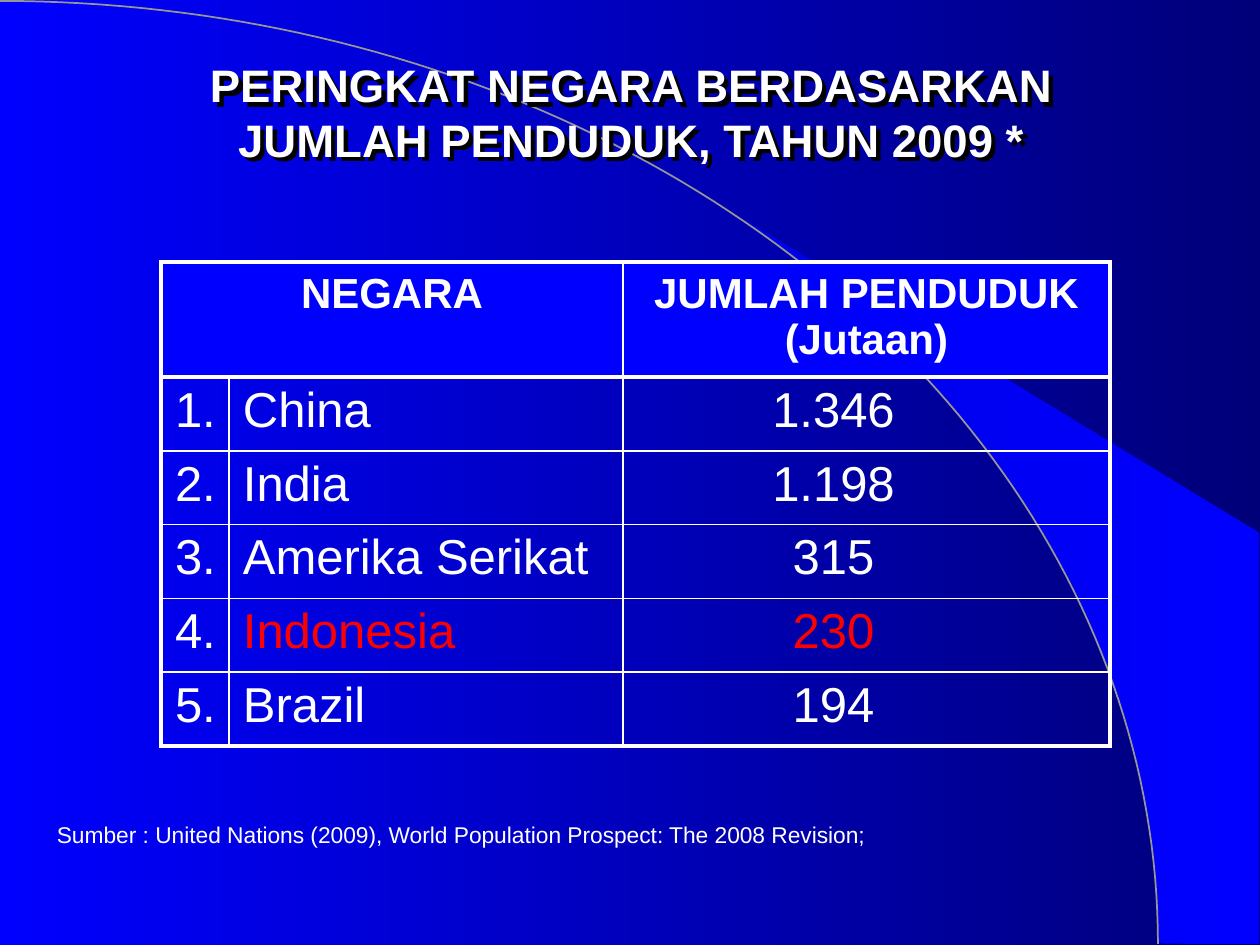
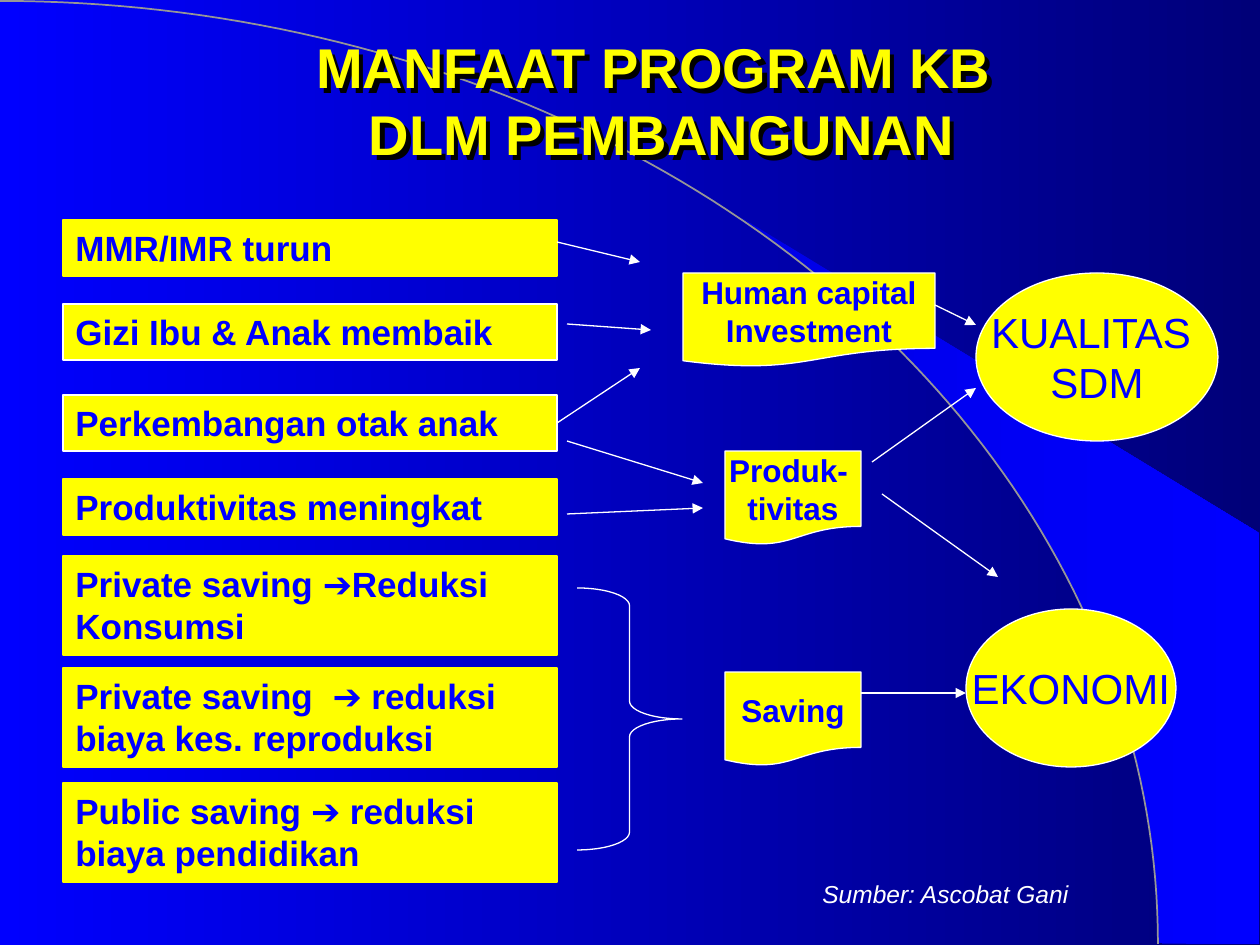
from math import cos, pi, sin

from lxml import etree
from pptx import Presentation
from pptx.dml.color import RGBColor
from pptx.enum.shapes import MSO_CONNECTOR, MSO_SHAPE
from pptx.enum.text import MSO_ANCHOR, MSO_AUTO_SIZE, PP_ALIGN
from pptx.oxml import parse_xml
from pptx.oxml.ns import nsdecls, qn
from pptx.util import Pt

SCALE = 914400 / 126
W, H = 1260, 945
FONT = "Arial"
C = {
    "blue": "0000FF",
    "navy": "000078",
    "wedge": "0000E7",
    "arc": "969696",
    "white": "FFFFFF",
    "yellow": "FFFF00",
    "red": "FF0000",
    "black": "000000",
}


def px(n):
    return round(n * SCALE)


def box_emu(box):
    return [px(n) for n in box]


def rgb(name):
    return RGBColor.from_string(C[name])


def set_gradient(fill, *names):
    fill.gradient()
    fill.gradient_angle = 0
    for stop, name in zip(fill.gradient_stops, names):
        stop.color.rgb = rgb(name)


def set_line(line, color, width):
    line.color.rgb = rgb(color)
    line.width = Pt(width)


def add_run(p, text, size, color, bold=False, italic=False):
    r = p.add_run()
    r.text = text
    f = r.font
    f.name, f.size, f.bold, f.italic = FONT, Pt(size), bold, italic
    f.color.rgb = rgb(color)


def write_lines(tf, lines, size, color, align=PP_ALIGN.CENTER, **style):
    """Write one paragraph per line."""
    for i, line in enumerate(lines):
        p = tf.add_paragraph() if i else tf.paragraphs[0]
        p.alignment = align
        add_run(p, line, size, color, **style)


def add_text_shadow(sp):
    """Give an unfilled text box a shadow, which falls from its letters."""
    sp.fill.background()
    sp._element.spPr.append(parse_xml(
        f'<a:effectLst {nsdecls("a")}><a:outerShdw dist="45000" dir="2700000" algn="ctr">'
        f'<a:srgbClr val="{C["black"]}"/></a:outerShdw></a:effectLst>'))


def add_polyline(s, points, close):
    (x, y), *rest = [(px(a), px(b)) for a, b in points]
    builder = s.shapes.build_freeform(x, y, scale=1.0)
    builder.add_line_segments(rest, close=close)
    sp = builder.convert_to_shape()
    sp.shadow.inherit = False
    return sp


def add_backdrop(s):
    """Gradient ground, bright wedge at the right and a quarter-ellipse arc."""
    set_gradient(s.background.fill, "blue", "navy")
    wedge = add_polyline(s, [
        (1159, 943), (1259, 944), (1259, 533), (742, 218), (786, 251), (823, 280),
        (863, 315), (902, 353), (960, 416), (1012, 484), (1048, 543), (1081, 604),
        (1106, 665), (1125, 721), (1138, 767), (1150, 827), (1155, 877)], True)
    set_gradient(wedge.fill, "wedge", "blue")
    wedge.line.fill.background()

    steps = 90
    angles = [pi / 2 * i / steps for i in range(steps + 1)]
    arc = add_polyline(s, [(1158 * sin(a), 944 - 943 * cos(a)) for a in angles], False)
    arc.fill.background()
    set_line(arc.line, "arc", 1)


def new_slide(prs):
    s = prs.slides.add_slide(prs.slide_layouts[6])
    add_backdrop(s)
    return s


def add_title(s, box, lines, size, color, anchor):
    sp = s.shapes.add_textbox(*box_emu(box))
    add_text_shadow(sp)
    tf = sp.text_frame
    tf.word_wrap = True
    tf.vertical_anchor = anchor
    p = tf.paragraphs[0]
    p.alignment = PP_ALIGN.CENTER
    for i, line in enumerate(lines):
        if i:
            p.add_line_break()
        add_run(p, line, size, color, bold=True)


def add_source(s, box, text, size, italic=False):
    tf = s.shapes.add_textbox(*box_emu(box)).text_frame
    tf.word_wrap = False
    tf.auto_size = MSO_AUTO_SIZE.SHAPE_TO_FIT_TEXT
    write_lines(tf, [text], size, "white", italic=italic)


def set_borders(cell, widths):
    """Draw white borders; widths run left, right, top, bottom in points."""
    tcPr = cell._tc.get_or_add_tcPr()
    for i, (side, width) in enumerate(zip("LRTB", widths)):
        ln = etree.Element(qn(f"a:ln{side}"), w=str(Pt(width)))
        fill = etree.SubElement(ln, qn("a:solidFill"))
        etree.SubElement(fill, qn("a:srgbClr"), val=C["white"])
        tcPr.insert(i, ln)


def add_population_table(s, box):
    countries = [("China", "1.346"), ("India", "1.198"), ("Amerika Serikat", "315"),
                 ("Indonesia", "230"), ("Brazil", "194")]
    rows = [("NEGARA", "", "JUMLAH PENDUDUK (Jutaan)")]
    rows += [(f"{i}.", *country) for i, country in enumerate(countries, 1)]
    last_row, last_col = len(rows) - 1, 2
    thick, thin = 2.25, 1
    right_margins = (4, 14, 80)

    table = s.shapes.add_table(len(rows), 3, *box_emu(box)).table
    table.first_row = table.horz_banding = False
    for col, width in zip(table.columns, (68, 394, 487)):
        col.width = px(width)
    header_height = 115
    for i, row in enumerate(table.rows):
        row.height = px((box[3] - header_height) / last_row if i else header_height)
    table.cell(0, 0).merge(table.cell(0, 1))

    for i, values in enumerate(rows):
        for j, text in enumerate(values):
            cell = table.cell(i, j)
            header = i == 0
            cell.margin_left = px(14)
            cell.margin_right = px(14 if header else right_margins[j])
            cell.margin_top = px(8 if header else 6)
            cell.margin_bottom = px(6)
            if header:
                cell.fill.solid()
                cell.fill.fore_color.rgb = rgb("blue")
            else:
                cell.fill.background()
            set_borders(cell, [thick if edge else thin for edge in (
                j == 0, j == last_col, i <= 1, i in (0, last_row))])
            if text:
                centred = header or j == last_col
                highlight = "Indonesia" in values and j > 0
                write_lines(cell.text_frame, [text], 24 if header else 28,
                            "red" if highlight else "white",
                            PP_ALIGN.CENTER if centred else PP_ALIGN.LEFT, bold=header)


def add_yellow_shape(s, kind, box, line="white"):
    sp = s.shapes.add_shape(kind, *box_emu(box))
    sp.shadow.inherit = False
    sp.fill.solid()
    sp.fill.fore_color.rgb = rgb("yellow")
    set_line(sp.line, line, 0.75)
    return sp


def add_node(s, kind, box, lines, size, bold):
    sp = add_yellow_shape(s, kind, box)
    tf = sp.text_frame
    tf.word_wrap = False
    tf.vertical_anchor = MSO_ANCHOR.MIDDLE
    write_lines(tf, lines, size, "blue", bold=bold)


def add_benefits(s, left, top, width):
    """Stack the benefit boxes and return them by their text."""
    one_line, two_lines = 56, 99
    benefits = [
        (0, one_line, "yellow", "MMR/IMR turun"),
        (84, one_line, "white", "Gizi Ibu & Anak membaik"),
        (175, one_line, "white", "Perkembangan otak anak"),
        (259, one_line, "yellow", "Produktivitas meningkat"),
        (336, two_lines, "yellow", "Private saving ➔Reduksi Konsumsi"),
        (448, two_lines, "yellow", "Private saving  ➔ reduksi biaya kes. reproduksi"),
        (563, two_lines, "yellow", "Public saving ➔ reduksi biaya pendidikan"),
    ]
    boxes = {}
    for dy, height, line, text in benefits:
        sp = add_yellow_shape(s, MSO_SHAPE.RECTANGLE, (left, top + dy, width, height), line)
        tf = sp.text_frame
        tf.word_wrap = True
        tf.vertical_anchor = MSO_ANCHOR.TOP
        write_lines(tf, [text], 20, "blue", PP_ALIGN.LEFT, bold=True)
        boxes[text] = sp
    return boxes


def add_arrow(s, x1, y1, x2, y2, width=0.75):
    cn = s.shapes.add_connector(MSO_CONNECTOR.STRAIGHT, *box_emu((x1, y1, x2, y2)))
    set_line(cn.line, "white", width)
    etree.SubElement(cn.line._get_or_add_ln(), qn("a:tailEnd"), type="triangle")
    etree.SubElement(cn._element.spPr, qn("a:effectLst"))
    return cn


def add_brace(s, box):
    sp = s.shapes.add_shape(MSO_SHAPE.RIGHT_BRACE, *box_emu(box))
    sp.shadow.inherit = False
    sp.adjustments[0] = 0.17
    sp.fill.background()
    set_line(sp.line, "white", 0.75)


def population_slide(prs):
    s = new_slide(prs)
    add_title(s, (110, 51, 1043, 123),
              ["PERINGKAT NEGARA BERDASARKAN JUMLAH PENDUDUK, TAHUN 2009 *"],
              26, "white", MSO_ANCHOR.TOP)
    add_population_table(s, (161, 262, 949, 484))
    add_source(s, (41, 815, 839, 40),
               "Sumber : United Nations (2009), World Population Prospect: The 2008 Revision;", 13)


def benefits_slide(prs):
    s = new_slide(prs)
    add_title(s, (126, 32, 1071, 136), ["MANFAAT PROGRAM KB ", "DLM PEMBANGUNAN"],
              32, "yellow", MSO_ANCHOR.MIDDLE)
    for box, lines in [((976, 273, 242, 168), ["KUALITAS ", "SDM"]),
                       ((966, 609, 210, 158), ["EKONOMI"])]:
        add_node(s, MSO_SHAPE.OVAL, box, lines, 24, False)
    boxes = add_benefits(s, 63, 220, 494)
    for box, lines in [((683, 273, 252, 94), ["Human capital", "Investment"]),
                       ((725, 672, 136, 94), ["Saving"]),
                       ((725, 451, 136, 94), ["Produk- ", "tivitas"])]:
        add_node(s, MSO_SHAPE.FLOWCHART_DOCUMENT, box, lines, 18, True)
    add_brace(s, (577, 588, 105, 262))

    for ends in [(557, 242, 640, 262), (567, 324, 651, 330), (567, 441, 703, 483),
                 (567, 514, 703, 508), (935, 305, 976, 325), (872, 462, 976, 388),
                 (882, 494, 998, 577)]:
        add_arrow(s, *ends)
    brain = add_arrow(s, 557, 423, 640, 368)
    brain.begin_connect(boxes["Perkembangan otak anak"], 3)
    add_arrow(s, 861, 693, 966, 693, 1)
    add_source(s, (800, 873, 291, 42), "Sumber: Ascobat Gani", 14, italic=True)


def main():
    prs = Presentation()
    prs.slide_width, prs.slide_height = px(W), px(H)
    population_slide(prs)
    benefits_slide(prs)
    prs.save("out.pptx")


if __name__ == "__main__":
    main()
